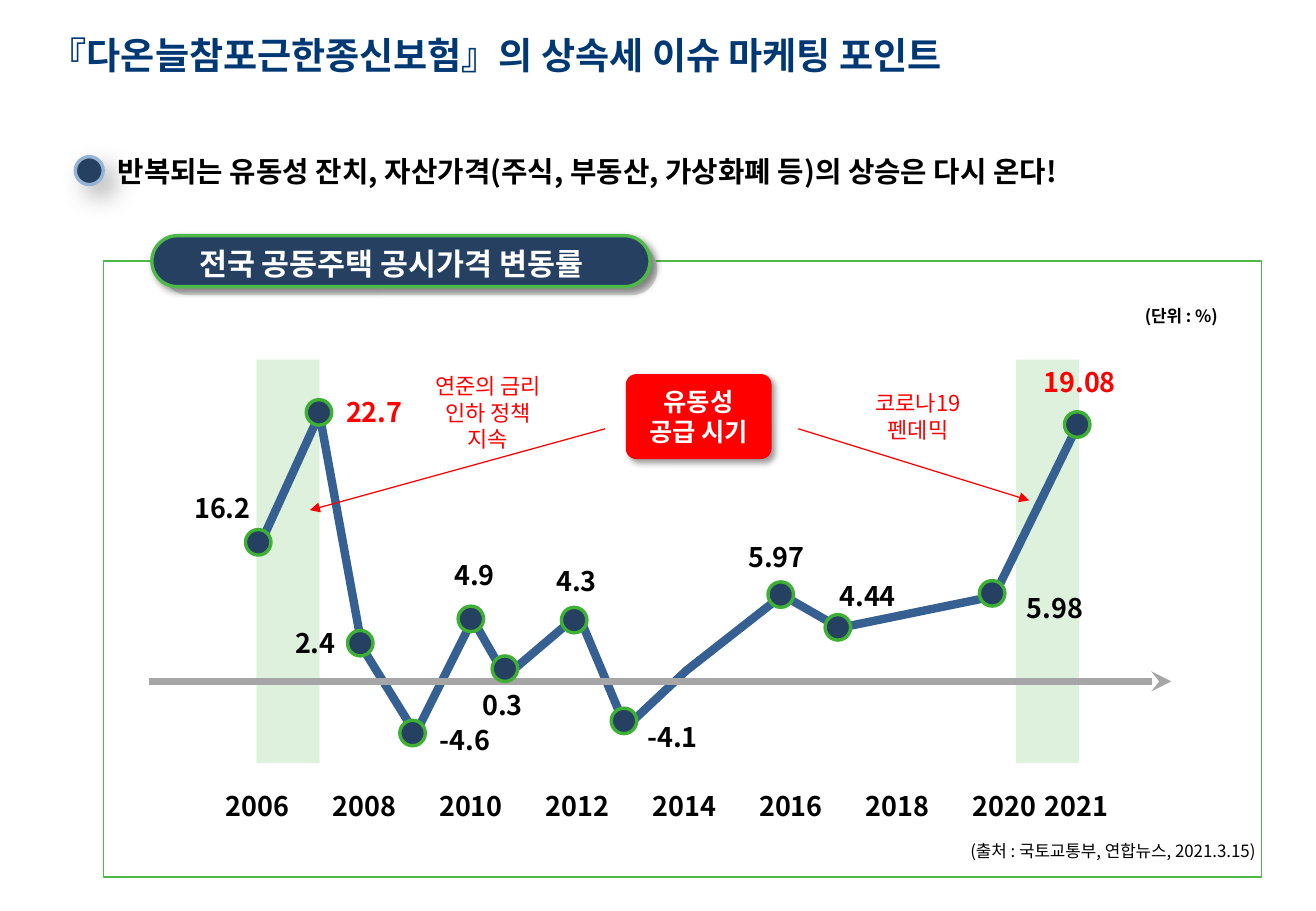
from dataclasses import dataclass

from lxml import etree
from pptx import Presentation
from pptx.dml.color import RGBColor
from pptx.enum.shapes import MSO_CONNECTOR, MSO_SHAPE
from pptx.enum.text import MSO_ANCHOR, MSO_AUTO_SIZE, PP_ALIGN
from pptx.oxml.ns import qn
from pptx.shapes.autoshape import Shape
from pptx.text.text import TextFrame
from pptx.util import Inches, Pt

FONT = "Noto Sans CJK KR"
COLORS = {
    "black": "000000", "white": "FFFFFF", "red": "FF0000", "title": "003874",
    "navy": "254061", "trend": "376092", "halo": "95B3D7", "axis": "A6A6A6",
    "frame": "4EB949", "ring": "3EB034", "band": "8CD189", "under": "D9D9D9",
}
CELL = Inches(0.1)  # side of one grid cell
MARKER = 2.1


@dataclass(frozen=True)
class Area:
    """Left column, top row, columns wide and rows high."""
    col: float
    row: float
    cols: float
    rows: float


@dataclass(frozen=True)
class Style:
    size: float
    color: str = "black"
    bold: bool = True
    align: PP_ALIGN = PP_ALIGN.LEFT


@dataclass(frozen=True)
class Shadow:
    opacity: int
    blur: float
    distance: float


@dataclass(frozen=True)
class Reading:
    """A price change with the corners of its marker and its label."""
    value: str
    marker: tuple[float, float]
    label: tuple[float, float]
    color: str = "black"


@dataclass(frozen=True)
class Arrow:
    start: tuple[float, float]
    end: tuple[float, float]
    color: str
    width: float
    head: str


@dataclass(frozen=True)
class Note:
    lines: tuple[str, ...]
    area: Area
    style: Style


LABEL = Style(16)
SOURCE = Style(10, bold=False, align=PP_ALIGN.RIGHT)
CAUSE = Style(13, "red", bold=False, align=PP_ALIGN.CENTER)
CARD_SHADOW = Shadow(40, 4, 3)

READINGS = [
    Reading("16.2", (20.2, 43.6), (15, 40)),
    Reading("22.7", (25.2, 32.9), (27.5, 32.1), "red"),
    Reading("2.4", (28.6, 51.9), (23.3, 51.1)),
    Reading("-4.6", (32.9, 59.3), (35.2, 59.1)),
    Reading("4.9", (37.7, 49.9), (36.4, 45.5)),
    Reading("0.3", (40.5, 54), (38.7, 56.2)),
    Reading("4.3", (46.2, 50), (44.8, 46)),
    Reading("-4.1", (50.3, 58.3), (52.3, 58.8)),
    Reading("5.97", (63.2, 47.9), (60.6, 44)),
    Reading("4.44", (67.9, 50.6), (68.1, 47.2)),
    Reading("5.98", (80.6, 47.8), (83.5, 48.2)),
    Reading("19.08", (87.6, 33.9), (84.9, 29.6), "red"),
]
TREND = [
    (21.1, 45.5), (26.3, 34.1), (29.8, 53.3), (34.2, 60.4), (38.9, 51),
    (41.6, 55.7), (47.6, 50.6), (51.5, 59.9), (56.5, 55.2), (64.4, 49),
    (69.1, 51.7), (81.8, 49.1), (88.9, 34.6),
]
YEAR_COLUMNS = {2006 + 2 * i: 17.6 + 8.78 * i for i in range(8)} | {2021: 85}
AXIS = Arrow((12.3, 56.1), (96.4, 56.1), "axis", 4, "stealth")
CAUSE_ARROWS = [
    Arrow((49.8, 35.3), (25.5, 42), "red", 0.75, "triangle"),
    Arrow((65.7, 35.3), (84.7, 41.2), "red", 0.75, "triangle"),
]
NOTES = [
    Note(("(출처 : 국토교통부, 연합뉴스, 2021.3.15)",), Area(50.3, 68.7, 54, 2.7), SOURCE),
    Note(("(단위 : %)",), Area(89.9, 24.7, 11.3, 2.7), Style(10, align=PP_ALIGN.RIGHT)),
    Note(("전국 공동주택 공시가격 변동률",), Area(15.4, 19.7, 37, 3.2), Style(18, "white")),
    Note(("코로나19 펜데믹",), Area(70, 31.6, 11.1, 5.4), CAUSE),
    Note(("연준의 금리", "인하 정책 지속"), Area(34.6, 30.2, 11.1, 7.6), CAUSE),
]

deck = Presentation()
deck.slide_width, deck.slide_height = Inches(10.83), Inches(7.5)
slide = deck.slides.add_slide(deck.slide_layouts[6])


def grid(*cells: float) -> list[int]:
    return [round(cell * CELL) for cell in cells]


def place(area: Area) -> list[int]:
    return grid(area.col, area.row, area.cols, area.rows)


def rgb(color: str) -> RGBColor:
    return RGBColor.from_string(COLORS[color])


def cast_shadow(shape: Shape, shadow: Shadow) -> None:
    effects = shape._element.spPr.find(qn("a:effectLst"))
    outer = etree.SubElement(effects, qn("a:outerShdw"), blurRad=str(Pt(shadow.blur)),
                             dist=str(Pt(shadow.distance)), dir=str(45 * 60000),
                             algn="tl", rotWithShape="0")
    tint = etree.SubElement(outer, qn("a:srgbClr"), val=COLORS["black"])
    etree.SubElement(tint, qn("a:alpha"), val=str(shadow.opacity * 1000))


def draw(kind: MSO_SHAPE, area: Area, fill: str | None = None, line: str | None = None,
         width: float = 2, corner: float | None = None, opacity: int | None = None,
         shadow: Shadow | None = None) -> Shape:
    shape = slide.shapes.add_shape(kind, *place(area))
    shape.shadow.inherit = False
    if corner is not None:
        shape.adjustments[0] = corner
    if fill:
        shape.fill.solid()
        shape.fill.fore_color.rgb = rgb(fill)
    else:
        shape.fill.background()
    if line:
        shape.line.color.rgb = rgb(line)
        shape.line.width = Pt(width)
    else:
        shape.line.fill.background()
    if opacity is not None:
        tint = shape._element.spPr.find(qn("a:solidFill"))[0]
        etree.SubElement(tint, qn("a:alpha"), val=str(opacity * 1000))
    if shadow:
        cast_shadow(shape, shadow)
    return shape


def write(frame: TextFrame, lines: tuple[str, ...], style: Style) -> None:
    frame.word_wrap = True
    frame.text = "\n".join(lines)
    for paragraph in frame.paragraphs:
        paragraph.alignment = style.align
        font = paragraph.font
        font.name, font.size, font.bold = FONT, Pt(style.size), style.bold
        font.color.rgb = rgb(style.color)
        defaults = paragraph._p.pPr.find(qn("a:defRPr"))
        etree.SubElement(defaults, qn("a:ea"), typeface=FONT)


def add_text(lines: tuple[str, ...], area: Area, style: Style) -> TextFrame:
    frame = slide.shapes.add_textbox(*place(area)).text_frame
    write(frame, lines, style)
    frame.auto_size = MSO_AUTO_SIZE.SHAPE_TO_FIT_TEXT
    return frame


def add_arrow(arrow: Arrow) -> None:
    connector = slide.shapes.add_connector(
        MSO_CONNECTOR.STRAIGHT, *grid(*arrow.start, *arrow.end))
    connector.line.color.rgb = rgb(arrow.color)
    connector.line.width = Pt(arrow.width)
    etree.SubElement(connector.line._get_or_add_ln(), qn("a:tailEnd"), type=arrow.head)
    etree.SubElement(connector._element.spPr, qn("a:effectLst"))


def add_trend() -> None:
    first, *rest = [grid(*point) for point in TREND]
    outline = slide.shapes.build_freeform(*first)
    outline.add_line_segments(rest, close=False)
    trend = outline.convert_to_shape()
    trend.shadow.inherit = False
    trend.fill.background()
    trend.line.color.rgb = rgb("trend")
    trend.line.width = Pt(5)


def main() -> None:
    draw(MSO_SHAPE.RECTANGLE, Area(8.5, 21.5, 95.3, 50.7), line="frame", width=0.75)
    add_text(("반복되는 유동성 잔치, 자산가격(주식, 부동산, 가상화폐 등)의 상승은 다시 온다!",),
             Area(8.7, 12.2, 83.9, 3.9), Style(17))
    draw(MSO_SHAPE.OVAL, Area(6.2, 12.9, 2.3, 2.3), "navy", "halo", shadow=Shadow(30, 15, 9))

    for column in (83.6, 21.1):
        draw(MSO_SHAPE.RECTANGLE, Area(column, 29.6, 5.2, 33.2), "band", opacity=29)
    add_trend()
    add_arrow(AXIS)
    for year, column in YEAR_COLUMNS.items():
        add_text((str(year),), Area(column, 64.5, 7.6, 3.7), LABEL)
    for reading in READINGS:
        draw(MSO_SHAPE.OVAL, Area(*reading.marker, MARKER, MARKER), "navy", "ring")
        add_text((reading.value,), Area(*reading.label, 9, 3.7), Style(16, reading.color))

    draw(MSO_SHAPE.ROUNDED_RECTANGLE, Area(13.4, 20.1, 40.7, 4.2), "under", corner=0.5)
    draw(MSO_SHAPE.ROUNDED_RECTANGLE, Area(12.5, 19.4, 41, 4.2), "navy", "frame",
         corner=0.5, shadow=CARD_SHADOW)
    supply = draw(MSO_SHAPE.ROUNDED_RECTANGLE, Area(51.5, 30.8, 12, 7), "red",
                  corner=0.125, shadow=CARD_SHADOW)
    write(supply.text_frame, ("유동성", "공급 시기"), Style(15, "white", align=PP_ALIGN.CENTER))
    supply.text_frame.vertical_anchor = MSO_ANCHOR.MIDDLE
    for arrow in CAUSE_ARROWS:
        add_arrow(arrow)
    for note in NOTES:
        add_text(note.lines, note.area, note.style)

    title = add_text(("『다온늘참포근한종신보험』의 상속세 이슈 마케팅 포인트",),
                     Area(4.1, 2.2, 102.5, 4.7), Style(22, "title"))
    title.margin_left = 0
    deck.save("out.pptx")


if __name__ == "__main__":
    main()
